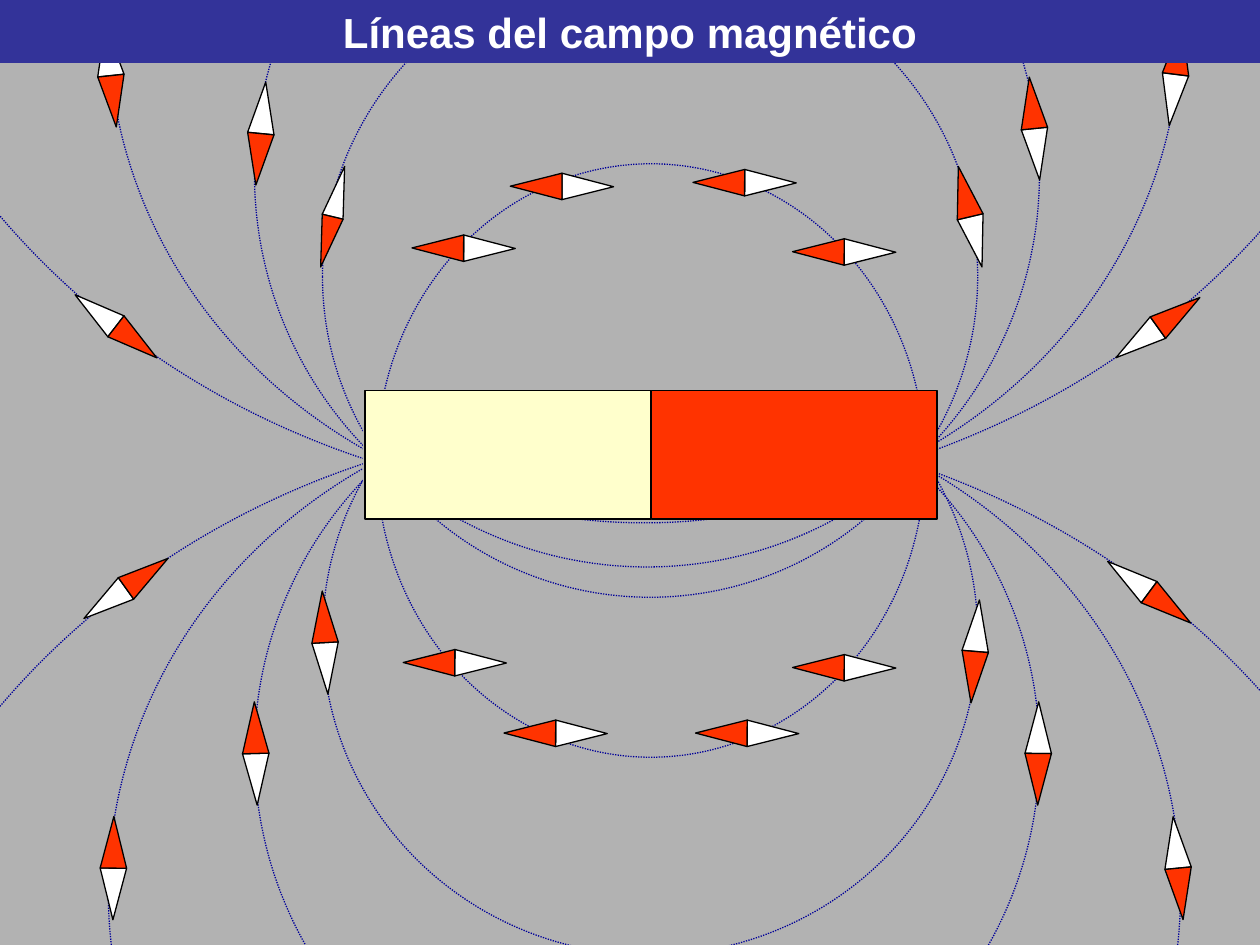
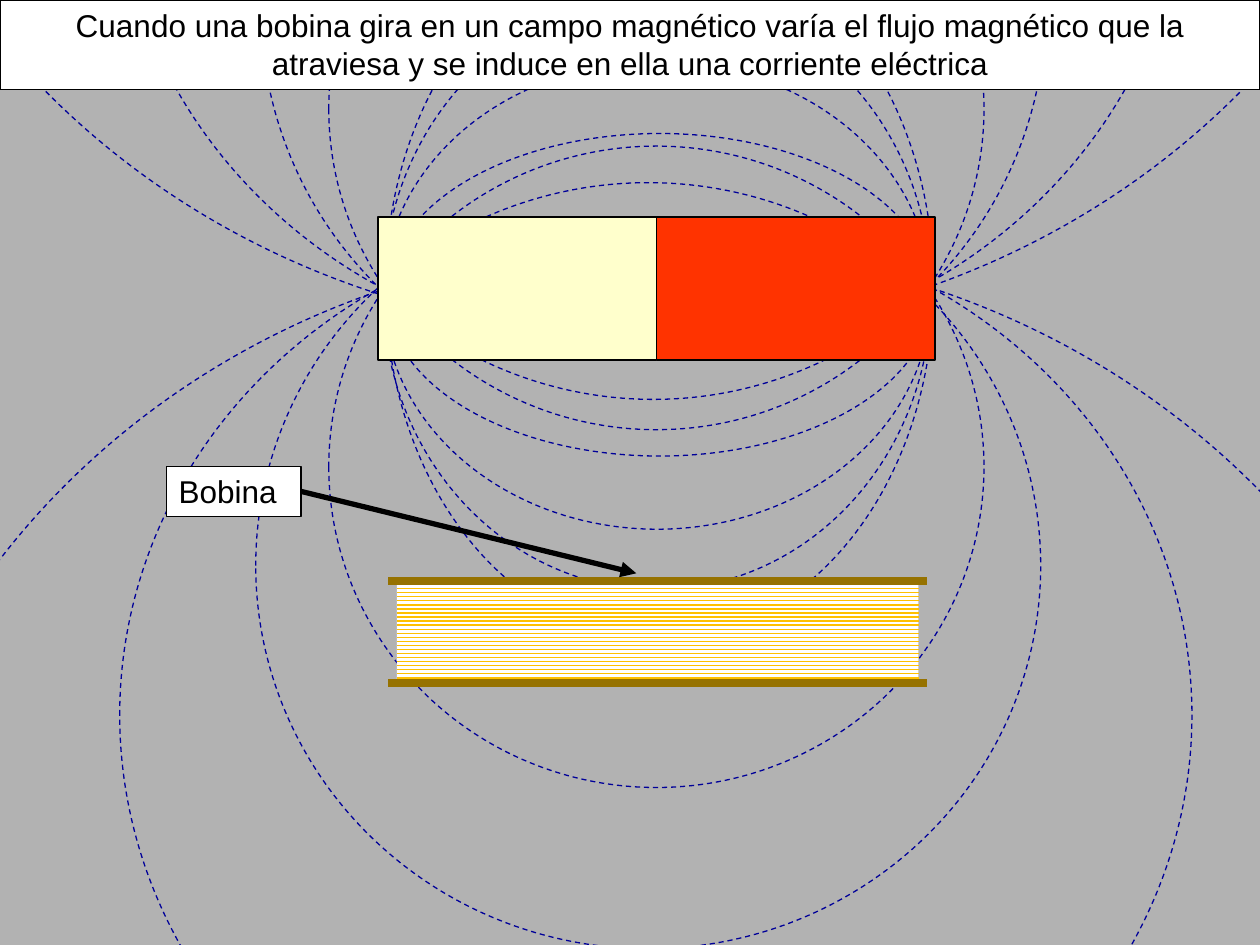
from lxml import etree
from math import cos, radians, sin
from pptx import Presentation
from pptx.dml.color import RGBColor
from pptx.enum import dml, shapes, text
from pptx.oxml.ns import qn
from pptx.util import Inches, Pt

GREY = RGBColor(0xB2, 0xB2, 0xB2)
NAVY = RGBColor(0x00, 0x00, 0x99)
TITLE_BLUE = RGBColor(0x33, 0x33, 0x99)
RED = RGBColor(0xFF, 0x33, 0x00)
CREAM = RGBColor(0xFF, 0xFF, 0xCC)
WHITE = RGBColor(0xFF, 0xFF, 0xFF)
BLACK = RGBColor(0x00, 0x00, 0x00)
GOLD = RGBColor(0xFF, 0xC0, 0x00)
BRONZE = RGBColor(0x96, 0x72, 0x00)

FONT = "Arial"
SLIDE_WIDTH, SLIDE_HEIGHT = 10, 7.5
NEEDLE_HALF = 0.41
NEEDLE_WIDTH = 0.21
COIL_TURNS = 24

MIRRORED_LOOPS = [
    (2.02, 6.23, 6.23, (-1.73, 2.85)),
    (2.56, 5.2, 5.09, (-0.35, 2.49)),
    (0.86, 8.51, 7.91, (-3.76, 3.13)),
    (-1.39, 12.89, 11.99, (-8, 3.33)),
]
COIL_FIELD_LOOPS = [
    (3.04, -0.03, 4.35, 4.71), (3.07, 1.06, 4.33, 2.56),
    (3.04, 0.49, 4.35, 3.71), (3.06, -0.52, 4.35, 5.59),
    (2.61, -1.68, 5.2, 5.09), (2.07, -3.06, 6.23, 6.23),
    (0.91, -5.09, 8.51, 7.91), (-1.34, -9.33, 12.89, 11.99),
    (2.03, 1.45, 6.23, 6.08), (2.61, 1.16, 5.2, 5.09),
    (0.95, 1.72, 8.51, 7.91), (-1.21, 1.94, 12.89, 11.99),
]
LEFTWARD_NEEDLES = [
    (3.61, 5.26), (6.7, 5.3), (5.93, 5.82), (4.41, 5.82),
    (3.68, 1.97), (6.7, 2), (5.91, 1.45), (4.46, 1.48),
]
TURNED_NEEDLES = [
    (0.92, 2.59, 127.7), (9.19, 2.6, 54.4),
    (1, 4.67, 54.5), (9.12, 4.7, 126.6),
    (7.7, 1.72, 346.8), (2.58, 5.1, 356.9), (7.74, 5.17, 184.7),
    (2.07, 1.06, 185.5), (8.21, 1.02, 354.3),
    (2.03, 5.98, 358.5), (8.24, 5.98, 180.6),
    (0.88, 0.6, 174), (9.33, 0.59, 7.1),
    (0.9, 6.89, 0.6), (9.35, 6.89, 174.5),
]
MASK_OUTLINE = [
    (3.43, 3.04), (4.3, 2.58), (4.88, 2.48), (5.33, 2.44), (6.15, 2.63),
    (6.96, 3.04), (7, 3.12), (3.38, 3.12),
]


def style(part, fill=None, line=None, weight=0.75):
    part.shadow.inherit = False
    if fill is None:
        part.fill.background()
    else:
        part.fill.solid()
        part.fill.fore_color.rgb = fill
    if line is None:
        part.line.fill.background()
    else:
        part.line.color.rgb = line
        part.line.width = Pt(weight)


def add_part(slide, kind, box, fill=None, line=None, weight=0.75):
    part = slide.shapes.add_shape(kind, *map(Inches, box))
    style(part, fill, line, weight)
    return part


def add_rectangle(slide, box, fill, line=None, weight=0.75):
    return add_part(slide, shapes.MSO_SHAPE.RECTANGLE, box, fill, line, weight)


def add_line(slide, start, end, color, weight):
    line = slide.shapes.add_connector(
        shapes.MSO_CONNECTOR.STRAIGHT, *map(Inches, (*start, *end)))
    line.line.color.rgb = color
    line.line.width = Pt(weight)
    etree.SubElement(line._element.spPr, qn("a:effectLst"))
    return line


def add_caption(slide, box, wording, size, fill, color, line=None,
                bold=False, align=text.PP_ALIGN.CENTER):
    caption = add_rectangle(slide, box, fill, line)
    frame = caption.text_frame
    frame.text = wording
    frame.word_wrap = True
    frame.auto_size = text.MSO_AUTO_SIZE.SHAPE_TO_FIT_TEXT
    frame.vertical_anchor = text.MSO_ANCHOR.TOP
    paragraph = frame.paragraphs[0]
    paragraph.alignment = align
    font = paragraph.runs[0].font
    font.name, font.size, font.bold = FONT, Pt(size), bold
    font.color.rgb = color
    return caption


def add_field_loop(slide, box, dash):
    loop = add_part(slide, shapes.MSO_SHAPE.OVAL, box, line=NAVY)
    loop.line.dash_style = dash


def add_needle(slide, x, y, heading, width=NEEDLE_WIDTH):
    for turn, color in ((heading + 180, WHITE), (heading, RED)):
        center_x = x + sin(radians(turn)) * NEEDLE_HALF / 2
        center_y = y - cos(radians(turn)) * NEEDLE_HALF / 2
        box = (center_x - width / 2, center_y - NEEDLE_HALF / 2,
               width, NEEDLE_HALF)
        half = add_part(slide, shapes.MSO_SHAPE.ISOSCELES_TRIANGLE, box,
                        color, BLACK)
        half.rotation = turn % 360


def add_magnet(slide, box):
    left, top, width, height = box
    half = width / 2
    add_rectangle(slide, (left + half, top, half, height), RED, BLACK, 1)
    add_rectangle(slide, (left, top, half, height), CREAM, BLACK, 1)


def add_field_mask(slide):
    first, *rest = [(Inches(x), Inches(y)) for x, y in MASK_OUTLINE]
    builder = slide.shapes.build_freeform(*first)
    builder.add_line_segments(rest, close=True)
    style(builder.convert_to_shape(), GREY)
    for box in ((2.88, 3.2, 0.18, 0.93), (7.35, 3.2, 0.09, 0.93)):
        add_rectangle(slide, box, GREY)


def add_coil(slide, box):
    left, top, width, height = box
    inner_left, inner_right = left + 0.07, left + width - 0.07
    add_rectangle(slide, (inner_left, top, inner_right - inner_left, height),
                  WHITE)
    first, last = top + 0.06, top + height - 0.03
    pitch = (last - first) / (COIL_TURNS - 1)
    for turn in range(COIL_TURNS):
        y = first + turn * pitch
        add_line(slide, (inner_left, y), (inner_right, y), GOLD, 0.75)
    for y in (top + 0.03, top + height + 0.01):
        add_line(slide, (left, y), (left + width, y), BRONZE, 4.5)


def add_coil_label(slide, box, target):
    label = add_caption(slide, box, "Bobina", 18, WHITE, BLACK, BLACK,
                        align=text.PP_ALIGN.LEFT)
    left, top, width, height = box
    pointer = add_line(slide, (left + width, top + height / 2), target,
                       BLACK, 3)
    pointer.begin_connect(label, 3)
    etree.SubElement(pointer.line._get_or_add_ln(), qn("a:tailEnd"),
                     type="triangle")


def add_grey_slide(deck):
    slide = deck.slides.add_slide(deck.slide_layouts[6])
    slide.background.fill.solid()
    slide.background.fill.fore_color.rgb = GREY
    return slide


def build_field_lines(deck):
    slide = add_grey_slide(deck)
    dots = dml.MSO_LINE.ROUND_DOT
    add_field_loop(slide, (2.99, 1.3, 4.35, 4.71), dots)
    for left, width, height, tops in MIRRORED_LOOPS:
        for top in tops:
            add_field_loop(slide, (left, top, width, height), dots)
    for x, y in LEFTWARD_NEEDLES:
        add_needle(slide, x, y, 270.3)
    add_field_mask(slide)
    add_magnet(slide, (2.9, 3.1, 4.54, 1.02))
    add_needle(slide, 2.64, 1.72, 193.4, width=0.17)
    for x, y, heading in TURNED_NEEDLES:
        add_needle(slide, x, y, heading)
    add_caption(slide, (0, 0, SLIDE_WIDTH, 0.5), "Líneas del campo magnético",
                24, TITLE_BLUE, WHITE, bold=True)


def build_coil_induction(deck):
    slide = add_grey_slide(deck)
    for box in COIL_FIELD_LOOPS:
        add_field_loop(slide, box, dml.MSO_LINE.DASH)
    add_magnet(slide, (3, 1.72, 4.42, 1.14))
    add_coil(slide, (3.08, 4.58, 4.28, 0.83))
    add_coil_label(slide, (1.32, 3.7, 1.07, 0.4), (5.05, 4.55))
    add_caption(slide, (0, 0, SLIDE_WIDTH, 0.71),
                "Cuando una bobina gira en un campo magnético varía el flujo "
                "magnético que la atraviesa y se induce en ella una corriente "
                "eléctrica", 18, WHITE, BLACK, BLACK)


def main():
    deck = Presentation()
    deck.slide_width = Inches(SLIDE_WIDTH)
    deck.slide_height = Inches(SLIDE_HEIGHT)
    build_field_lines(deck)
    build_coil_induction(deck)
    deck.save("out.pptx")


if __name__ == "__main__":
    main()
